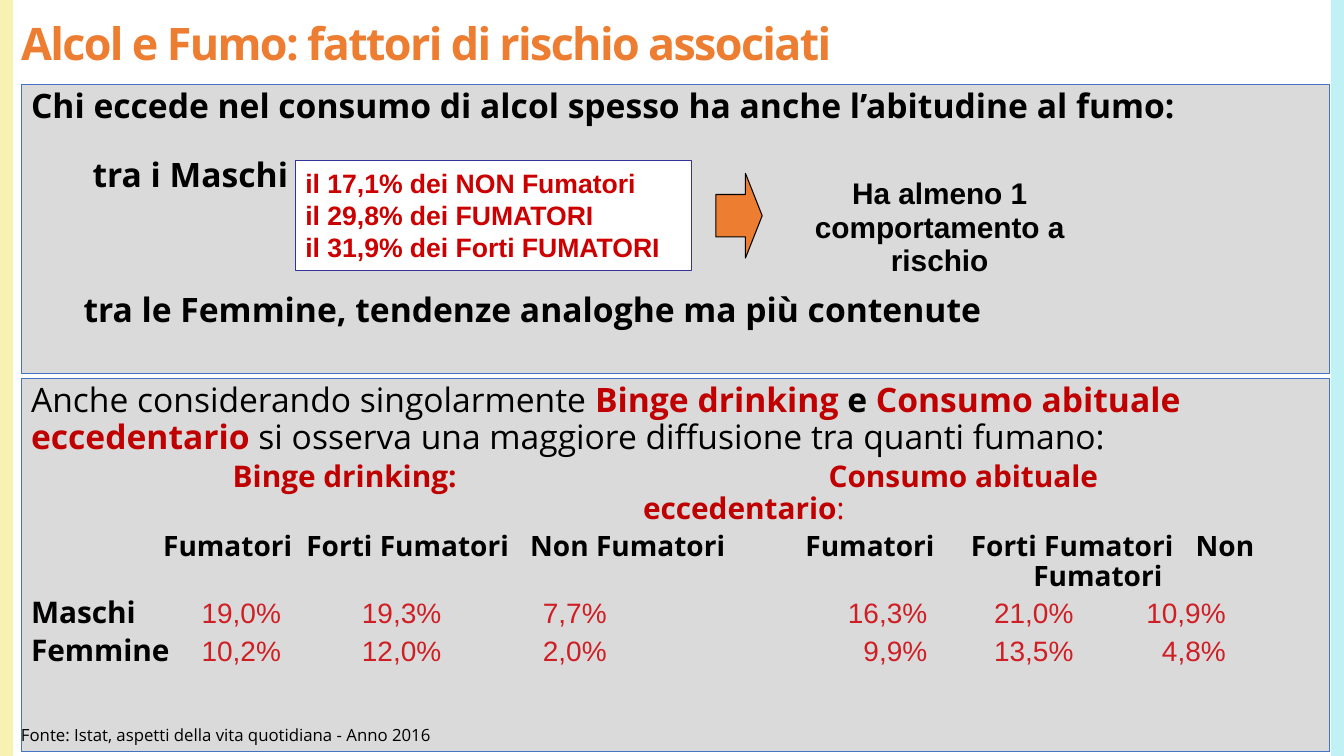
from dataclasses import dataclass

from lxml import etree
from pptx import Presentation
from pptx.dml.color import RGBColor
from pptx.enum.shapes import MSO_SHAPE
from pptx.enum.text import MSO_ANCHOR, MSO_AUTO_SIZE, PP_ALIGN
from pptx.oxml.ns import qn
from pptx.util import Inches, Pt

RECT, ARROW = MSO_SHAPE.RECTANGLE, MSO_SHAPE.RIGHT_ARROW
TOP, MIDDLE = MSO_ANCHOR.TOP, MSO_ANCHOR.MIDDLE
LEFT, CENTER = PP_ALIGN.LEFT, PP_ALIGN.CENTER
FIXED_SIZE = MSO_AUTO_SIZE.NONE


@dataclass(frozen=True)
class Theme:
    sans: str = "Open Sans"
    arial: str = "Arial"
    black: str = "000000"
    white: str = "FFFFFF"
    orange: str = "ED7D31"
    panel: str = "D9D9D9"
    panel_line: str = "4472C4"
    box_line: str = "333399"
    rates: str = "CC0000"
    accent: str = "C00000"
    values: str = "CF1E24"
    left_strip: str = "F7F2B1"
    right_strip: str = "C0F1F4"
    title: float = 32
    body: float = 24
    label: float = 21.3
    cell: float = 20
    rate: float = 19
    source: float = 12


THEME = Theme()

# Content
TITLE = "Alcol e Fumo: fattori di rischio associati"
HABITS = [  # text, left indent in inches, space before in points
    ("Chi eccede nel consumo di alcol spesso ha anche l’abitudine al fumo:", 0, 0),
    ("tra i Maschi", 0.61, 23.5),
    ("tra le Femmine, tendenze analoghe ma più contenute", 0.52, 70.5),
]
RATES = ["il 17,1% dei NON Fumatori", "il 29,8% dei FUMATORI",
         "il 31,9% dei Forti FUMATORI"]
OUTCOME = "Ha almeno 1 comportamento a rischio"
INTRO = [  # text, colour, bold
    ("Anche considerando singolarmente ", THEME.black, False),
    ("Binge drinking ", THEME.accent, True),
    ("e ", THEME.black, True),
    ("Consumo abituale eccedentario ", THEME.accent, True),
    ("si osserva una maggiore diffusione tra quanti fumano:", THEME.black, False),
]
GROUPS = ("Binge drinking:", "Consumo abituale", "eccedentario")
COLUMNS = ["Fumatori", "Forti Fumatori", "Non Fumatori",
           "Fumatori", "Forti Fumatori", "Non"]
COLUMN_END = "Fumatori"
ROWS = [
    ("Maschi", ["19,0%", "19,3%", "7,7%", "16,3%", "21,0%", "10,9%"]),
    ("Femmine", ["10,2%", "12,0%", "2,0%", "9,9%", "13,5%", "4,8%"]),
]
SOURCE = "Fonte: Istat, aspetti della vita quotidiana - Anno 2016"

# Tab stops, in inches from the text edge
GROUP_TABS = [2.0, 6.07, 7.91]
COLUMN_TABS = [1.31, 2.73, 4.95, 7.68, 9.32, 9.94, 11.55]
COLUMN_END_TAB = 6  # the wrapped word stands at the sixth stop
VALUE_TABS = [2.48, 4.07, 5.71, 8.89, 10.34, 11.85]

deck = Presentation()
deck.slide_width, deck.slide_height = Inches(13.33), Inches(7.5)
page = deck.slides.add_slide(deck.slide_layouts[5])


def color(code):
    return RGBColor.from_string(code)


def add_box(kind, place, fill, line=None, alpha=None):
    box = page.shapes.add_shape(kind, *map(Inches, place))
    box.shadow.inherit = False
    box.fill.solid()
    box.fill.fore_color.rgb = color(fill)
    if alpha:
        tint = box._element.spPr.find(".//" + qn("a:srgbClr"))
        etree.SubElement(tint, qn("a:alpha"), val=str(alpha * 1000))
    if line:
        box.line.color.rgb = color(line)
        box.line.width = Pt(0.75)
    else:
        box.line.fill.background()
    return box


def add_text(place):
    box = page.shapes.add_textbox(*map(Inches, place))
    box.text_frame.word_wrap = True
    return box


def style(target, size=None, font=None, ink=None, bold=None):
    if size:
        target.font.size = Pt(size)
    if font:
        target.font.name = font
    if ink:
        target.font.color.rgb = color(ink)
    if bold is not None:
        target.font.bold = bold


def add_para(box, size, font=THEME.sans, ink=THEME.black, bold=False, before=0,
             spacing=1.0, align=LEFT, indent=0, tabs=(), tab_side="l"):
    """Next paragraph of a box; an untouched first one is reused."""
    frame = box.text_frame
    first = frame.paragraphs[0]
    fresh = len(frame.paragraphs) == 1 and not first.runs
    para = first if fresh else frame.add_paragraph()
    props = para._p.get_or_add_pPr()
    if indent:
        props.set("marL", str(Inches(indent)))
    if tabs:
        stops = etree.SubElement(props, qn("a:tabLst"))
        for stop in tabs:
            etree.SubElement(stops, qn("a:tab"), pos=str(Inches(stop)), algn=tab_side)
    para.alignment = align
    para.line_spacing = spacing
    if before:
        para.space_before = Pt(before)
    style(para, size, font, ink, bold)
    return para


def add_span(para, text, **look):
    span = para.add_run()
    span.text = text
    style(span, **look)
    return span


def tabbed(texts):
    return "".join("\t" + text for text in texts)


# Side strips
for strip_left, strip_fill in ((0, THEME.left_strip), (13.2, THEME.right_strip)):
    add_box(RECT, (strip_left, 0, 0.13, 7.5), strip_fill)

# Title
title = page.shapes.title
title.left, title.top, title.width, title.height = map(Inches, (0.21, 0.21, 11.79, 0.51))
frame = title.text_frame
frame.auto_size, frame.vertical_anchor = FIXED_SIZE, MIDDLE
frame.margin_left = frame.margin_right = frame.margin_top = frame.margin_bottom = 0
heading = add_para(title, THEME.title, ink=THEME.orange, bold=True,
                   spacing=Pt(THEME.title))
add_span(heading, TITLE)._r.get_or_add_rPr().set("spc", "-120")

# Panels
habits, diffusion = [
    add_box(RECT, (0.21, top, 12.98, height), THEME.panel, THEME.panel_line, alpha=95)
    for top, height in ((0.84, 2.87), (3.76, 3.7))]
for panel in (habits, diffusion):
    panel.text_frame.vertical_anchor = TOP

# Upper panel: habits, rates, arrow, outcome
for text, indent, before in HABITS:
    add_span(add_para(habits, THEME.body, bold=True, before=before,
                      spacing=0.9, indent=indent), text)

rates = add_box(RECT, (2.93, 1.59, 3.93, 1.09), THEME.white, THEME.box_line)
rates.text_frame.vertical_anchor = MIDDLE
for text in RATES:
    add_span(add_para(rates, THEME.rate, THEME.arial, THEME.rates, bold=True), text)

arrow = add_box(ARROW, (7.1, 1.72, 0.46, 0.84), THEME.orange, THEME.black)
arrow.adjustments[0], arrow.adjustments[1] = 0.5, 0.36

outcome = add_text((7.8, 1.72, 3.04, 1.07))
add_span(add_para(outcome, THEME.label, THEME.arial, bold=True,
                  spacing=0.93, align=CENTER), OUTCOME)

# Lower panel: introduction, headings and values on tab stops
intro = add_para(diffusion, THEME.body, spacing=0.9)
for text, ink, bold in INTRO:
    add_span(intro, text, ink=ink, bold=bold)

binge, habitual, excess = GROUPS
groups = add_para(diffusion, THEME.label, ink=THEME.accent, bold=True, before=4,
                  spacing=0.9, tabs=GROUP_TABS)
add_span(groups, f"\t{binge}\t\t{habitual}")
groups.add_line_break()
add_span(groups, f"\t\t{excess}")
add_span(groups, ":", bold=False)

columns = add_para(diffusion, THEME.cell, bold=True, before=4, spacing=0.9,
                   tabs=COLUMN_TABS)
add_span(columns, tabbed(COLUMNS))
columns.add_line_break()
add_span(columns, "\t" * COLUMN_END_TAB + COLUMN_END)

for name, values in ROWS:
    row = add_para(diffusion, THEME.label, bold=True, before=4, spacing=0.9,
                   tabs=VALUE_TABS, tab_side="r")
    add_span(row, name)
    add_span(row, tabbed(values), size=THEME.cell, font=THEME.arial,
             ink=THEME.values, bold=False)

# Source line
source = add_text((0.11, 7.14, 4.64, 0.3))
add_span(add_para(source, THEME.source), SOURCE)

deck.save("out.pptx")
